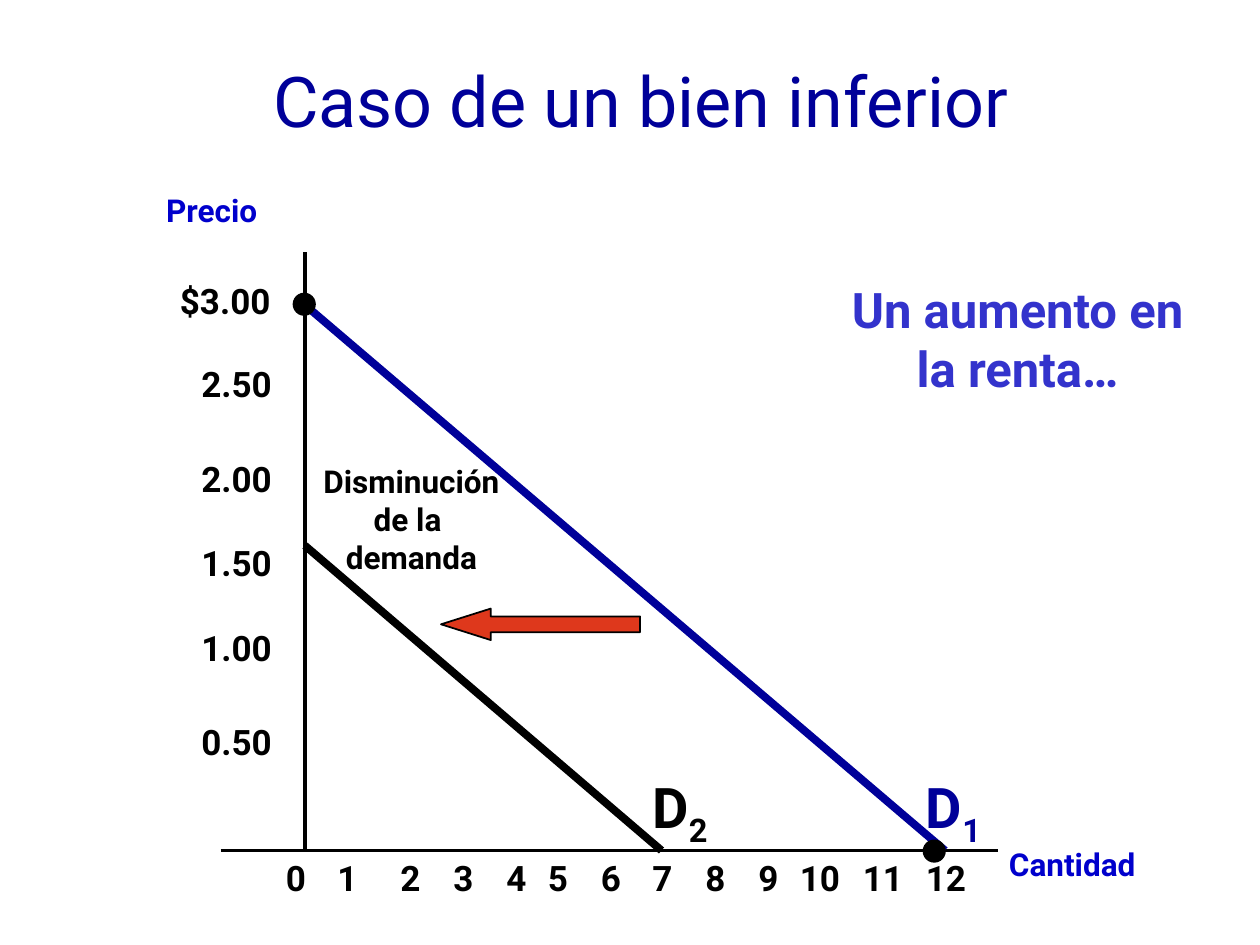
from lxml import etree
from pptx import Presentation
from pptx.dml.color import RGBColor
from pptx.enum.shapes import MSO_CONNECTOR, MSO_SHAPE
from pptx.enum.text import MSO_ANCHOR, PP_ALIGN
from pptx.oxml.ns import qn
from pptx.util import Inches, Pt

FONT = "Roboto"
BLACK = RGBColor(0x00, 0x00, 0x00)
NAVY = RGBColor(0x00, 0x00, 0x99)
AXIS_BLUE = RGBColor(0x00, 0x00, 0xCC)
NOTE_BLUE = RGBColor(0x33, 0x33, 0xCC)
RED = RGBColor(0xDE, 0x38, 0x1C)
STRAIGHT = MSO_CONNECTOR.STRAIGHT
OVAL = MSO_SHAPE.OVAL
LEFT_ARROW = MSO_SHAPE.LEFT_ARROW
CENTER = PP_ALIGN.CENTER
LEFT = PP_ALIGN.LEFT
TOP = MSO_ANCHOR.TOP
MIDDLE = MSO_ANCHOR.MIDDLE

prs = Presentation()
prs.slide_width, prs.slide_height = Inches(10), Inches(7.5)
slide = prs.slides.add_slide(prs.slide_layouts[6])


def add_text(text, x, y, w, h, size=20, color=BLACK, bold=True, align=LEFT,
             anchor=TOP, spacing=None, subscript="", inset=True, wrap=True):
    """Place text, one paragraph a line, with an optional subscript at the end."""
    box = slide.shapes.add_textbox(Inches(x), Inches(y), Inches(w), Inches(h))
    frame = box.text_frame
    frame.word_wrap = wrap
    frame.vertical_anchor = anchor
    if not inset:
        frame.margin_left = frame.margin_right = 0
        frame.margin_top = frame.margin_bottom = 0
    frame.text = text
    if subscript:
        lowered = frame.paragraphs[-1].add_run()
        lowered.text = subscript
        lowered.font._element.set("baseline", "-25000")
    for paragraph in frame.paragraphs:
        paragraph.alignment = align
        paragraph.line_spacing = spacing
        for run in paragraph.runs:
            run.font.name = FONT
            run.font.size = Pt(size)
            run.font.bold = bold
            run.font.color.rgb = color


def add_filled(kind, x, y, w, h, color):
    """Place a preset shape with a thin black outline."""
    shape = slide.shapes.add_shape(kind, Inches(x), Inches(y), Inches(w), Inches(h))
    shape.shadow.inherit = False
    shape.fill.solid()
    shape.fill.fore_color.rgb = color
    shape.line.color.rgb = BLACK
    shape.line.width = Pt(1)
    return shape


# Axes and the two demand lines
ORIGIN_X, ORIGIN_Y = 2.42, 6.75
for x1, y1, x2, y2, color, width in (
    (ORIGIN_X, 2, ORIGIN_X, ORIGIN_Y, BLACK, 2.25),
    (1.75, ORIGIN_Y, 7.92, ORIGIN_Y, BLACK, 2.25),
    (ORIGIN_X, 2.42, 7.5, ORIGIN_Y, NAVY, 4.5),
    (ORIGIN_X, 4.33, 5.25, ORIGIN_Y, BLACK, 4.5),
):
    line = slide.shapes.add_connector(
        STRAIGHT, Inches(x1), Inches(y1), Inches(x2), Inches(y2))
    line.line.color.rgb = color
    line.line.width = Pt(width)
    etree.SubElement(line._element.spPr, qn("a:effectLst"))

# End points of the first demand line
for x, y in ((7.33, 6.67), (2.33, 2.33)):
    add_filled(OVAL, x, y, 0.17, 0.17, BLACK)

# Price scale
add_text("$3.00", 1.33, 2.17, 1, 0.43)
for price, y in (("2.50", 2.83), ("2.00", 3.58), ("1.50", 4.25),
                 ("1.00", 4.92), ("0.50", 5.67)):
    add_text(price, 1.5, y, 0.83, 0.43)

# Quantity scale, unevenly spaced
quantity_lefts = (2.17, 2.58, 3.08, 3.5, 3.92, 4.25, 4.67,
                  5.08, 5.5, 5.92, 6.25, 6.75, 7.25)
for quantity, x in enumerate(quantity_lefts):
    add_text(str(quantity), x, ORIGIN_Y, 0.5 if quantity < 9 else 0.58, 0.43)

# Axis names
add_text("Precio", 1.22, 1.47, 2.17, 0.4, size=18, color=AXIS_BLUE)
add_text("Cantidad", 7.91, 6.66, 1.67, 0.4, size=18, color=AXIS_BLUE)

# Demand line names
for index, x, color in (("1", 7.25, NAVY), ("2", 5.08, BLACK)):
    add_text("D", x, 6.08, 0.83, 0.63, size=32, color=color, subscript=index)

# Shift of demand
add_text("Disminución\nde la \ndemanda", 2.49, 3.67, 1.55, 0.9, size=18,
         align=CENTER, inset=False, wrap=False)
shift_arrow = add_filled(LEFT_ARROW, 3.5, 4.83, 1.58, 0.25, RED)
shift_arrow.adjustments[0] = 0.5
shift_arrow.adjustments[1] = 1.58

# Title and remark
add_text("Caso de un bien inferior", 0.5, 0.17, 9.17, 1.33, size=40, color=NAVY,
         bold=False, align=CENTER, anchor=MIDDLE, spacing=0.9)
add_text("Un aumento en la renta…", 6.5, 2.17, 3.15, 1.03, size=28,
         color=NOTE_BLUE, align=CENTER)

prs.save("out.pptx")
